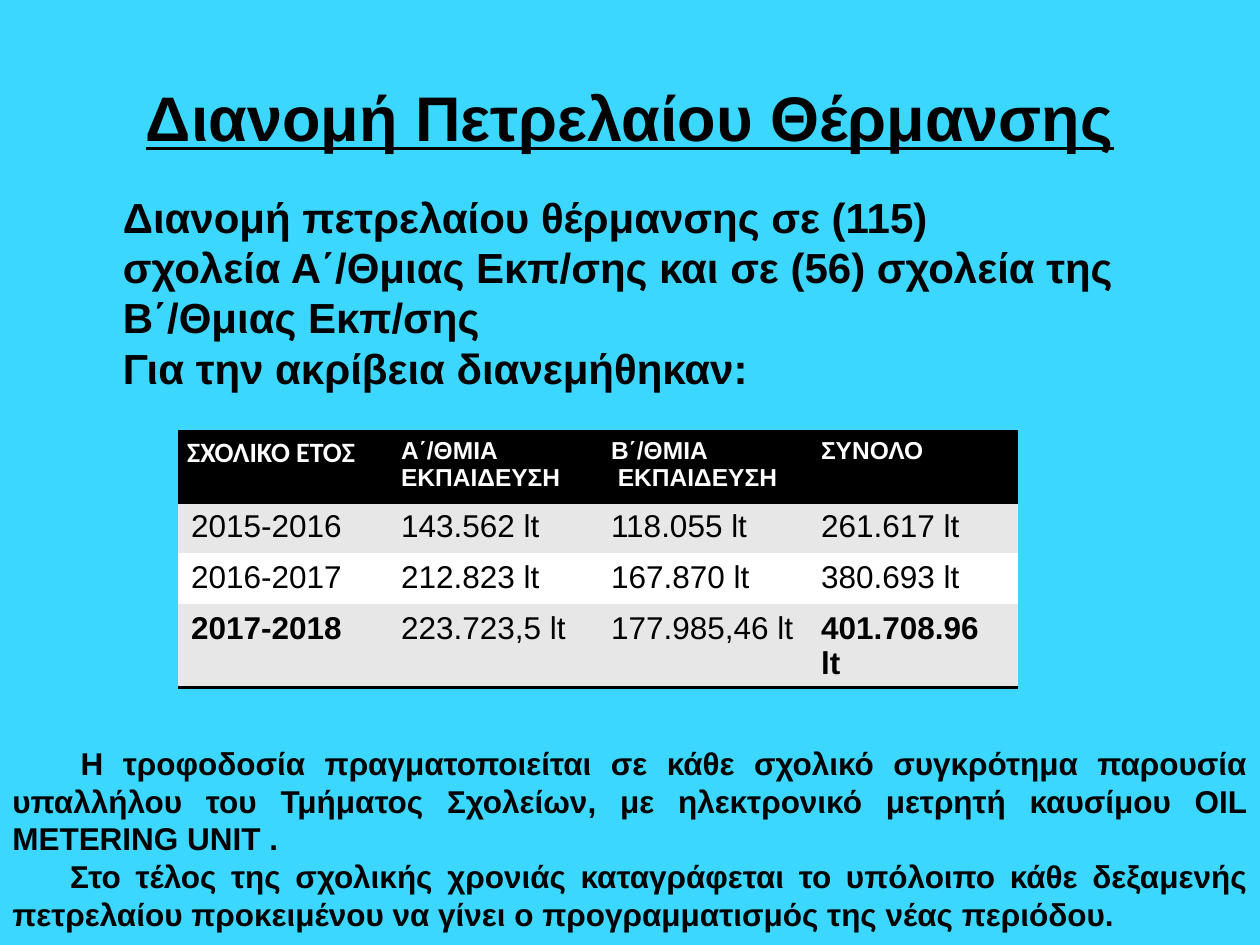
from dataclasses import dataclass

from lxml.etree import SubElement
from pptx import Presentation
from pptx.dml.color import RGBColor
from pptx.enum.text import MSO_ANCHOR, MSO_AUTO_SIZE, PP_ALIGN
from pptx.oxml.ns import qn
from pptx.util import Pt

COLORS = {"bg": "3BD7FF", "ink": "000000", "white": "FFFFFF", "band": "E7E7E7"}


@dataclass
class Style:
    size: float
    bold: bool = False
    color: str = "ink"
    font: str = "Arial"
    underline: bool = False


@dataclass
class Row:
    height: float
    fill: str
    cells: list[str]
    styles: list[Style]
    rule: bool = False


HEAD = Style(14, True, "white")
YEAR_HEAD = Style(16, True, "white", "Calibri")
CELL, CELL_BOLD = Style(18), Style(18, True)
BODY = Style(24, True)

ROWS = [
    Row(41, "ink", ["ΣΧΟΛΙΚΟ ΕΤΟΣ", "Α΄/ΘΜΙΑ\nΕΚΠΑΙΔΕΥΣΗ", "Β΄/ΘΜΙΑ\n ΕΚΠΑΙΔΕΥΣΗ", "ΣΥΝΟΛΟ"],
        [YEAR_HEAD, HEAD, HEAD, HEAD], rule=True),
    Row(29.2, "band", ["2015-2016", "143.562 lt", "118.055 lt", "261.617 lt"], [CELL] * 4),
    Row(29.2, "white", ["2016-2017", "212.823 lt", "167.870 lt", "380.693 lt"], [CELL] * 4),
    Row(29.2, "band", ["2017-2018", "223.723,5 lt", "177.985,46 lt", "401.708.96 lt"],
        [CELL_BOLD, CELL, CELL, CELL_BOLD], rule=True),
]
BODY_LINES = [
    "Διανομή πετρελαίου θέρμανσης σε (115)",
    "σχολεία Α΄/Θμιας Εκπ/σης και σε (56) σχολεία της Β΄/Θμιας Εκπ/σης",
    "Για την ακρίβεια διανεμήθηκαν:",
]
# First-line indent and text of each closing paragraph
NOTES = [
    (39, "Η τροφοδοσία πραγματοποιείται σε κάθε σχολικό συγκρότημα παρουσία υπαλλήλου "
         "του Τμήματος Σχολείων, με ηλεκτρονικό μετρητή καυσίμου OIL METERING UNIT ."),
    (33, "Στο τέλος της σχολικής χρονιάς καταγράφεται το υπόλοιπο κάθε δεξαμενής πετρελαίου "
         "προκειμένου να γίνει o προγραμματισμός της νέας περιόδου."),
]


def rgb(name: str) -> RGBColor:
    return RGBColor.from_string(COLORS[name])


def place(sp, left: float, top: float, width: float, height: float) -> None:
    sp.left, sp.top, sp.width, sp.height = Pt(left), Pt(top), Pt(width), Pt(height)


def add_run(p, text: str, style: Style) -> None:
    r = p.add_run()
    r.text = text
    f = r.font
    f.name, f.size, f.bold = style.font, Pt(style.size), style.bold
    f.underline = style.underline
    f.color.rgb = rgb(style.color)


def set_borders(cell, rule: bool) -> None:
    tc_pr = cell._tc.get_or_add_tcPr()
    for side in ("lnL", "lnR", "lnT", "lnB"):
        ln = SubElement(tc_pr, qn(f"a:{side}"))
        if rule and side == "lnB":
            ln.set("w", str(Pt(2)))
            fill = SubElement(ln, qn("a:solidFill"))
            SubElement(fill, qn("a:srgbClr"), val=COLORS["ink"])
        else:
            SubElement(ln, qn("a:noFill"))


def fill_cell(cell, text: str, style: Style, fill: str, rule: bool) -> None:
    set_borders(cell, rule)
    cell.fill.solid()
    cell.fill.fore_color.rgb = rgb(fill)
    tf = cell.text_frame
    for i, line in enumerate(text.split("\n")):
        p = tf.add_paragraph() if i else tf.paragraphs[0]
        add_run(p, line, style)
    if style is YEAR_HEAD:
        cell.margin_left = cell.margin_right = Pt(5)
        cell.margin_top = cell.margin_bottom = 0
        tf.paragraphs[0].line_spacing = 1.15


def add_rows(s, rows: list[Row], left: float, top: float, col_width: float) -> None:
    cols = len(rows[0].cells)
    height = sum(row.height for row in rows)
    tbl = s.shapes.add_table(len(rows), cols, Pt(left), Pt(top),
                             Pt(col_width * cols), Pt(height)).table
    for col in tbl.columns:
        col.width = Pt(col_width)
    for i, row in enumerate(rows):
        tbl.rows[i].height = Pt(row.height)
        for j, (text, style) in enumerate(zip(row.cells, row.styles)):
            fill_cell(tbl.cell(i, j), text, style, row.fill, row.rule)


def main() -> None:
    prs = Presentation()
    prs.slide_width, prs.slide_height = Pt(720), Pt(540)
    s = prs.slides.add_slide(prs.slide_layouts[1])
    s.background.fill.solid()
    s.background.fill.fore_color.rgb = rgb("bg")

    # Title
    title = s.shapes.title
    place(title, 36, 21.6, 648, 90)
    tf = title.text_frame
    tf.auto_size, tf.vertical_anchor = MSO_AUTO_SIZE.NONE, MSO_ANCHOR.MIDDLE
    p = tf.paragraphs[0]
    p.alignment = PP_ALIGN.CENTER
    add_run(p, "Διανομή Πετρελαίου Θέρμανσης", Style(36, True, underline=True))

    # Introduction
    body = s.placeholders[1]
    place(body, 36, 95.8, 648, 444)
    tf = body.text_frame
    tf.auto_size, tf.margin_top = MSO_AUTO_SIZE.NONE, Pt(13.4)
    p = tf.paragraphs[0]
    p.space_before = Pt(0)
    p_pr = p._p.get_or_add_pPr()
    p_pr.set("marL", str(Pt(27)))
    p_pr.set("indent", "0")
    SubElement(p_pr, qn("a:buNone"))
    for i, line in enumerate(BODY_LINES):
        if i:
            p.add_line_break()
        add_run(p, line, BODY)

    # Litres per school year
    add_rows(s, ROWS, left=102, top=246, col_width=120)

    # Closing notes
    sp = s.shapes.add_textbox(Pt(0), Pt(378), Pt(720), Pt(181.4))
    tf = sp.text_frame
    tf.word_wrap, tf.margin_top = True, Pt(47)
    for i, (indent, text) in enumerate(NOTES):
        p = tf.add_paragraph() if i else tf.paragraphs[0]
        p.alignment = PP_ALIGN.JUSTIFY
        p._p.get_or_add_pPr().set("indent", str(Pt(indent)))
        add_run(p, text, CELL_BOLD)

    prs.save("out.pptx")


if __name__ == "__main__":
    main()
